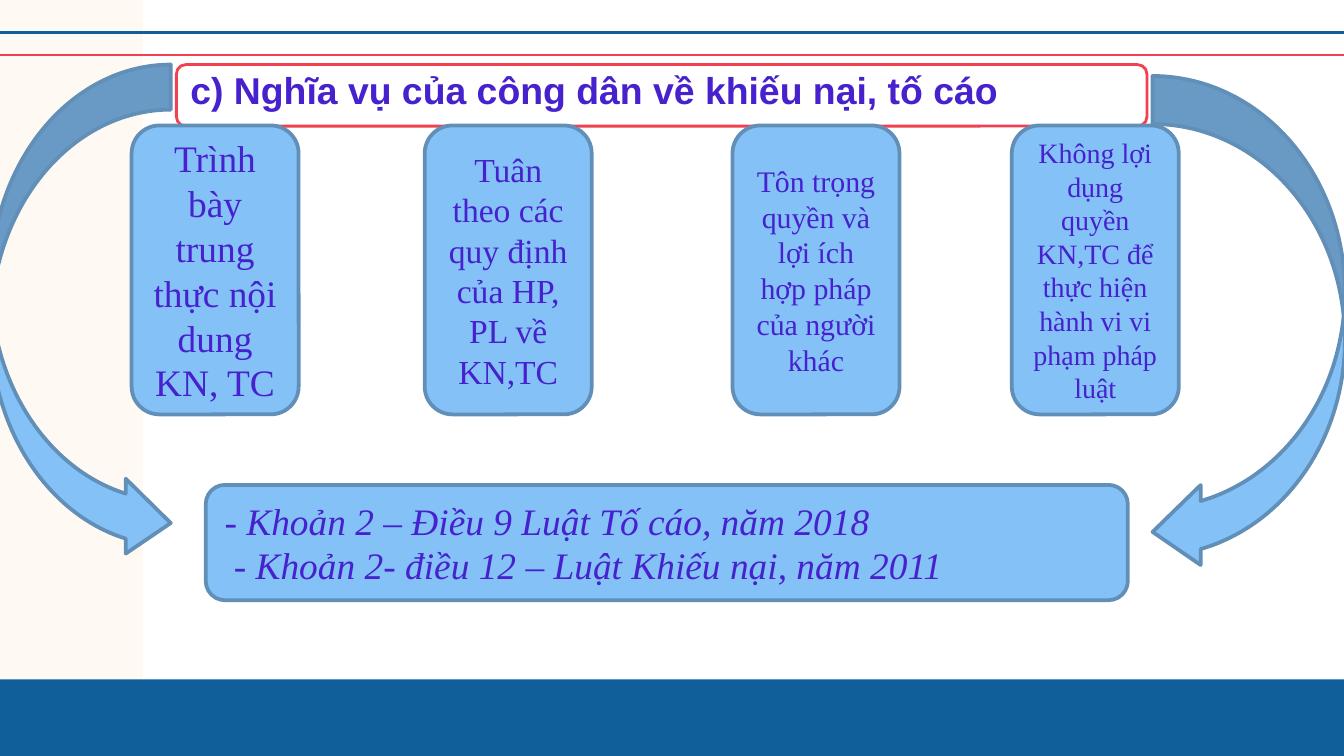
import pptx
import pptx.dml.color
import pptx.enum.shapes
import pptx.enum.text
import pptx.oxml.ns
import pptx.util
from lxml import etree

Pt = pptx.util.Pt
RGBColor = pptx.dml.color.RGBColor
SHAPE = pptx.enum.shapes.MSO_SHAPE
ALIGN = pptx.enum.text.PP_ALIGN
ANCHOR = pptx.enum.text.MSO_ANCHOR

CREAM = RGBColor(0xFE, 0xF9, 0xF3)
NAVY = RGBColor(0x10, 0x5F, 0x9A)
RED = RGBColor(0xF1, 0x40, 0x52)
SKY = RGBColor(0x83, 0xC1, 0xF7)
STEEL = RGBColor(0x61, 0x8F, 0xB7)
VIOLET = RGBColor(0x46, 0x21, 0xCD)

WIDTH, HEIGHT = 720, 405
DUTIES = [
    (70.5, "Trình bày trung thực nội dung KN, TC", 20),
    (227.5, "Tuân theo các quy định của HP, PL về KN,TC", 18),
    (392.4, "Tôn trọng quyền và lợi ích hợp pháp của người khác", 16),
    (542, "Không lợi dụng quyền KN,TC để thực hiện hành vi vi phạm pháp luật", 15),
]
LAWS = [
    "- Khoản 2 – Điều 9 Luật Tố cáo, năm 2018",
    " - Khoản 2- điều 12 – Luật Khiếu nại, năm 2011",
]


def add_block(page, kind, box, fill=None, line=None, weight=2):
    """Add a preset shape in the box, with optional fill and outline."""
    shape = page.shapes.add_shape(kind, *(Pt(length) for length in box))
    shape.shadow.inherit = False
    if fill is None:
        shape.fill.background()
    else:
        shape.fill.solid()
        shape.fill.fore_color.rgb = fill
    if line is None:
        shape.line.fill.background()
    else:
        shape.line.color.rgb = line
        shape.line.width = Pt(weight)
    return shape


def write_text(shape, lines, size, font="Times New Roman", align=ALIGN.LEFT,
               anchor=ANCHOR.MIDDLE, bold=False, italic=False):
    """Fill the shape with one paragraph for each line."""
    frame = shape.text_frame
    frame.word_wrap = True
    frame.vertical_anchor = anchor
    frame.text = "\n".join(lines)
    for para in frame.paragraphs:
        para.alignment = align
        para.font.name = font
        para.font.size = Pt(size)
        para.font.bold = bold
        para.font.italic = italic
        para.font.color.rgb = VIOLET


def add_rule(page, left, top, width, color):
    """Add a horizontal line without a shadow."""
    rule = page.shapes.add_connector(
        pptx.enum.shapes.MSO_CONNECTOR.STRAIGHT,
        Pt(left), Pt(top), Pt(left + width), Pt(top))
    rule.line.color.rgb = color
    rule.line.width = Pt(1.5)
    etree.SubElement(rule._element.spPr, pptx.oxml.ns.qn("a:effectLst"))


def add_backdrop(page, left, top, width, height):
    """Draw the side panel, footer band and top rules."""
    footer = 41
    add_block(page, SHAPE.RECTANGLE, (left, top, 76.5, height), CREAM)
    add_block(page, SHAPE.RECTANGLE,
              (left, top + height - footer, width, footer), NAVY)
    add_rule(page, left, top + 29.5, width, RED)
    add_rule(page, left, top + 17.3, width, NAVY)


def add_heading(page, box):
    """Draw the outlined heading."""
    shape = add_block(page, SHAPE.ROUNDED_RECTANGLE, box, line=RED, weight=1.5)
    shape.adjustments[0] = 0.155
    write_text(shape, ["c) Nghĩa vụ của công dân về khiếu nại, tố cáo"], 20,
               font="Arial", anchor=ANCHOR.TOP, bold=True)
    frame = shape.text_frame
    frame.margin_left = frame.margin_right = frame.margin_bottom = Pt(6)
    frame.margin_top = 0


def add_duty(page, box, text, size):
    """Draw one duty card."""
    shape = add_block(page, SHAPE.FLOWCHART_ALTERNATE_PROCESS, box, SKY, STEEL)
    write_text(shape, [text], size, align=ALIGN.CENTER)


def add_laws(page, box):
    """Draw the panel of legal references."""
    shape = add_block(page, SHAPE.FLOWCHART_ALTERNATE_PROCESS, box, SKY, STEEL)
    write_text(shape, LAWS, 20, italic=True)


def add_arrow(page, box, mirrored=False):
    """Draw a curved arrow from the heading down to the laws."""
    shape = add_block(page, SHAPE.CURVED_RIGHT_ARROW, box, SKY, STEEL)
    for index, value in enumerate((0.25, 0.416, 0.25)):
        shape.adjustments[index] = value
    if mirrored:
        shape._element.spPr.xfrm.set("flipH", "1")


def build_page(page):
    """Place every region of the slide."""
    add_backdrop(page, 0, 0, WIDTH, HEIGHT)
    add_heading(page, (94.5, 34.6, 520, 33))
    for left, text, size in DUTIES:
        add_duty(page, (left, 67.2, 89.5, 154.8), text, size)
    add_laws(page, (110.2, 259.8, 494, 61.8))
    add_arrow(page, (-5, 34.6, 96.5, 265.7))
    add_arrow(page, (617.5, 40.7, 103, 265.7), mirrored=True)


def main():
    """Build and save the deck."""
    deck = pptx.Presentation()
    deck.slide_width, deck.slide_height = Pt(WIDTH), Pt(HEIGHT)
    build_page(deck.slides.add_slide(deck.slide_layouts[6]))
    deck.save("out.pptx")


if __name__ == "__main__":
    main()
